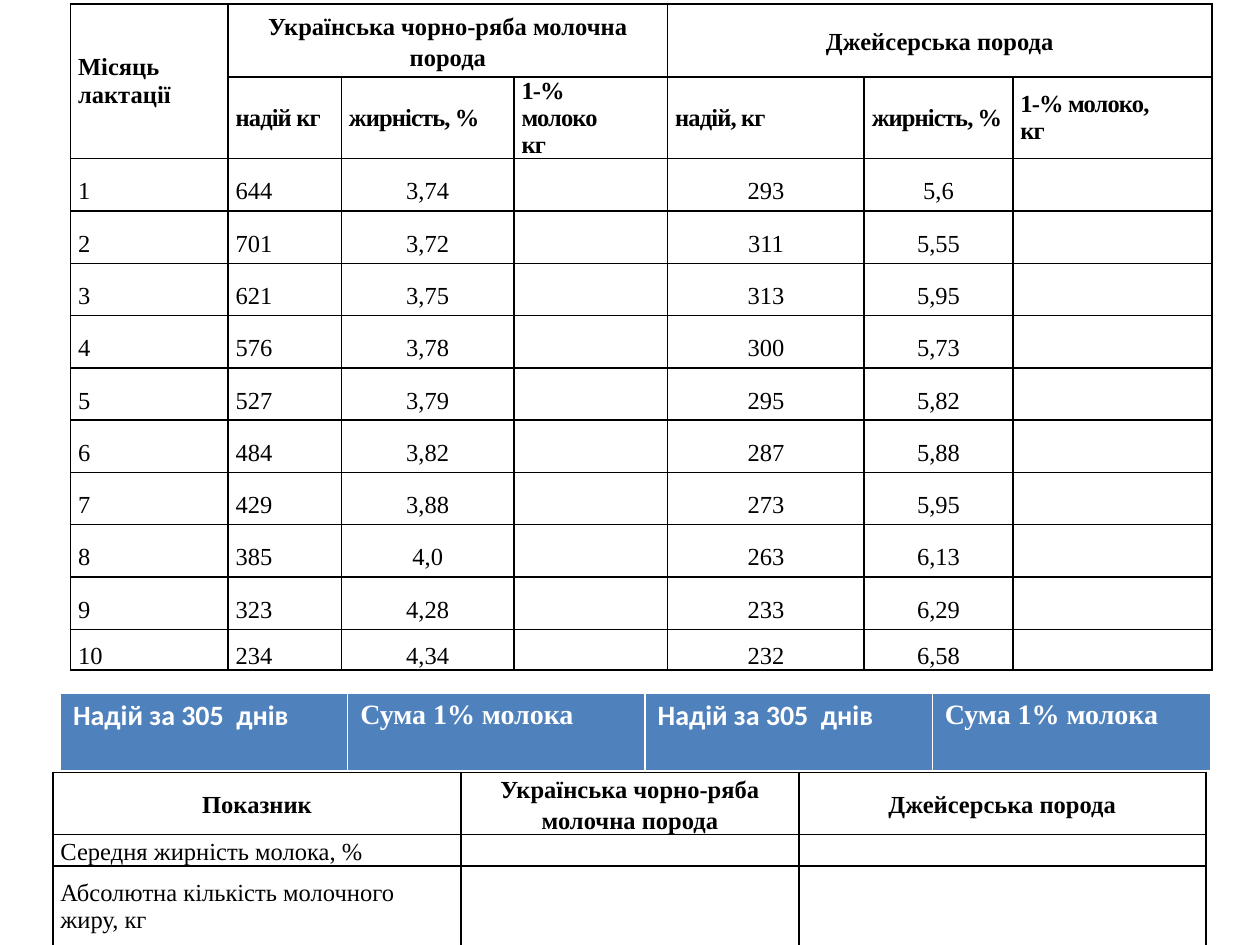
from lxml.etree import SubElement
from pptx import Presentation
from pptx.dml.color import RGBColor
from pptx.enum.text import MSO_ANCHOR as Anchor, PP_ALIGN as Align
from pptx.oxml.ns import qn
from pptx.util import Inches, Pt

COLORS = {"ink": "000000", "paper": "FFFFFF", "band": "4F81BD"}
SERIF, SANS = "Times New Roman", "Calibri"
BLACK_LINES = dict.fromkeys("LRTB", ("ink", 1))
WHITE_LINES = {**dict.fromkeys("LRT", ("paper", 1)), "B": ("paper", 3)}

UKRAINIAN, JERSEY = "Українська чорно-ряба молочна порода", "Джейсерська порода"
MONTH_HEADS = [
    ["Місяць лактації", UKRAINIAN, "", "", JERSEY, "", ""],
    ["", "надій кг", "жирність, %", "1-%\nмолоко\nкг",
     "надій, кг", "жирність, %", "1-% молоко,\nкг"],
]
# yield and fat of the Ukrainian breed, then of the Jersey breed, month by month
MONTHS = [
    ("644", "3,74", "293", "5,6"),
    ("701", "3,72", "311", "5,55"),
    ("621", "3,75", "313", "5,95"),
    ("576", "3,78", "300", "5,73"),
    ("527", "3,79", "295", "5,82"),
    ("484", "3,82", "287", "5,88"),
    ("429", "3,88", "273", "5,95"),
    ("385", "4,0", "263", "6,13"),
    ("323", "4,28", "233", "6,29"),
    ("234", "4,34", "232", "6,58"),
]
TOTALS = ["Надій за 305  днів", "Сума 1% молока"] * 2
INDICATORS = [
    ["Показник", UKRAINIAN, JERSEY],
    ["Середня жирність молока, %", "", ""],
    ["Абсолютна кількість молочного жиру, кг", "", ""],
]


def add_grid(page, left, top, columns, rows):
    frame = page.shapes.add_table(len(rows), len(columns), Inches(left), Inches(top),
                                  Inches(sum(columns)), Inches(sum(rows)))
    table = frame.table
    table.first_row = table.horz_banding = False
    for column, width in zip(table.columns, columns):
        column.width = Inches(width)
    for row, height in zip(table.rows, rows):
        row.height = Inches(height)
    return table


def draw_borders(cell, lines):
    properties = cell._tc.get_or_add_tcPr()
    for side, (color, width) in lines.items():
        line = SubElement(properties, qn(f"a:ln{side}"), w=str(Pt(width)))
        fill = SubElement(line, qn("a:solidFill"))
        SubElement(fill, qn("a:srgbClr"), val=COLORS[color])


def write_cell(cell, text, size=14, font=SERIF, color="ink", bold=False,
               align=Align.LEFT, leading=1.0, tracking=0):
    cell.text = text
    for para in cell.text_frame.paragraphs:
        para.alignment = align
        para.line_spacing = leading
        if not para.runs:
            para._p.get_or_add_endParaRPr().set("sz", str(size * 100))
        for span in para.runs:
            span.font.size, span.font.name, span.font.bold = Pt(size), font, bold
            span.font.color.rgb = RGBColor.from_string(COLORS[color])
            if tracking:
                span.font._element.set("spc", str(int(tracking * 100)))


def fill_ruled(table, content, style_of):
    """Write a black-ruled table; style_of(row, column) gives the text style."""
    for r, texts in enumerate(content):
        for c, text in enumerate(texts):
            cell = table.cell(r, c)
            draw_borders(cell, BLACK_LINES)
            cell.fill.background()
            cell.vertical_anchor = Anchor.MIDDLE
            cell.margin_left = cell.margin_right = Inches(0.06)
            cell.margin_top = cell.margin_bottom = 0
            if not cell.is_spanned:
                write_cell(cell, text, **style_of(r, c))


def month_style(r, c):
    if r == 0:
        return dict(bold=True) if c == 0 else dict(bold=True, align=Align.CENTER, leading=1.15)
    if r == 1:
        return dict(bold=True, tracking=-0.5)
    return dict(align=Align.LEFT if c < 2 else Align.CENTER, leading=1.5)


def indicator_style(r, c):
    if r == 0:
        return dict(bold=True, align=Align.CENTER, leading=1.15)
    return dict(leading=1.15 if r == 1 else 1.0)


def main():
    deck = Presentation()
    deck.slide_width, deck.slide_height = Inches(10), Inches(7.5)
    page = deck.slides.add_slide(deck.slide_layouts[6])

    months = add_grid(page, 0.56, 0.03, [1.25, 0.9, 1.37, 1.22, 1.56, 1.18, 1.58],
                      [0.58, 0.65] + [0.415] * (len(MONTHS) - 1) + [0.32])
    for first, last in [((0, 0), (1, 0)), ((0, 1), (0, 3)), ((0, 4), (0, 6))]:
        months.cell(*first).merge(months.cell(*last))
    records = [[str(number), *values[:2], "", *values[2:], ""]
               for number, values in enumerate(MONTHS, 1)]
    fill_ruled(months, MONTH_HEADS + records, month_style)

    totals = add_grid(page, 0.48, 5.5, [2.28, 2.36, 2.28, 2.21], [0.63])
    for c, text in enumerate(TOTALS):
        cell = totals.cell(0, c)
        draw_borders(cell, WHITE_LINES)
        cell.fill.solid()
        cell.fill.fore_color.rgb = RGBColor.from_string(COLORS["band"])
        write_cell(cell, text, size=16, font=(SANS, SERIF)[c % 2], color="paper", bold=True)

    indicators = add_grid(page, 0.42, 6.13, [3.24, 2.68, 3.23], [0.49, 0.25, 0.65])
    fill_ruled(indicators, INDICATORS, indicator_style)

    deck.save("out.pptx")


if __name__ == "__main__":
    main()
